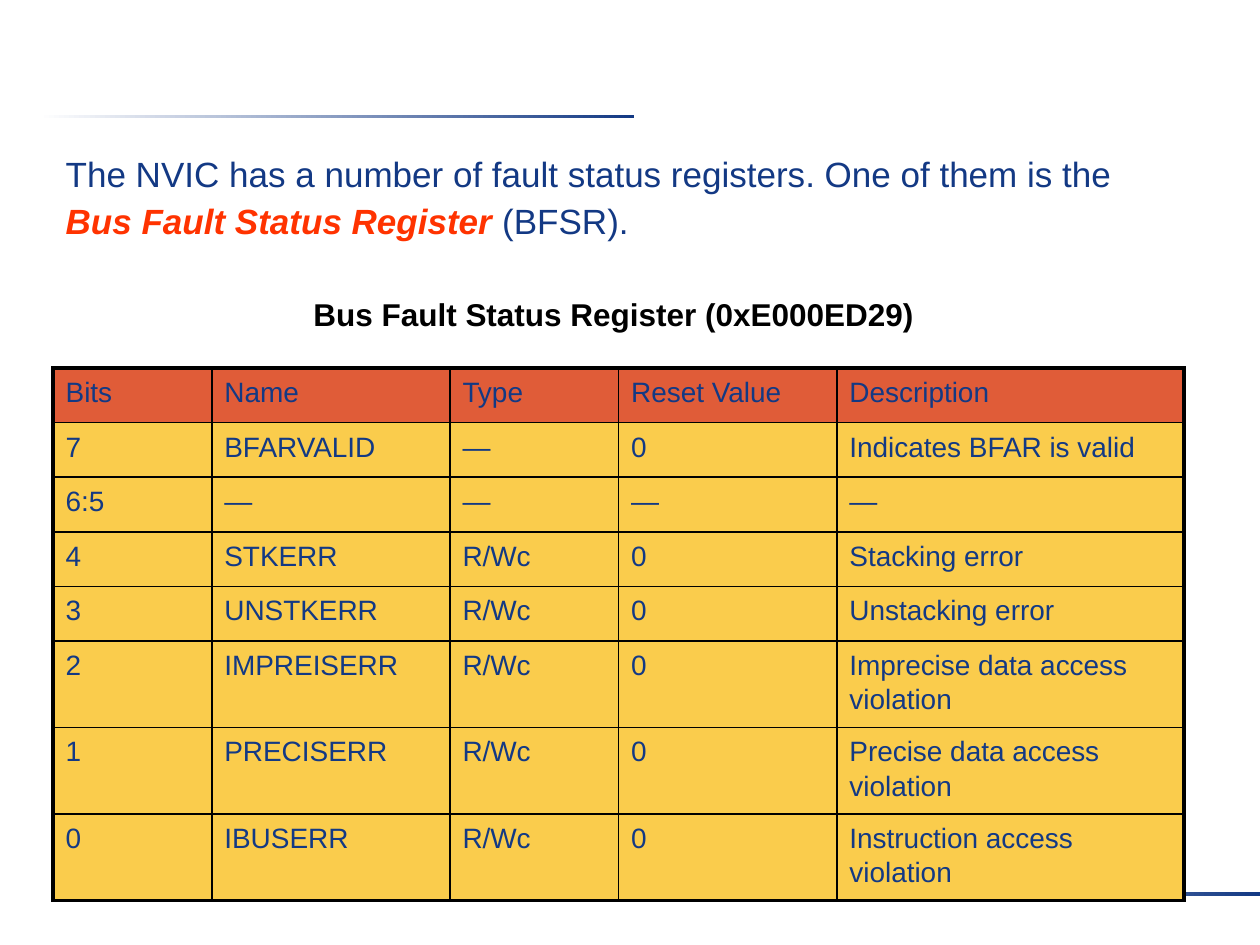
from lxml.etree import SubElement
from pptx import Presentation
from pptx.dml.color import RGBColor
from pptx.enum.shapes import MSO_SHAPE
from pptx.enum.text import MSO_ANCHOR
from pptx.oxml.ns import qn
from pptx.util import Cm, Pt

# Content
INTRO = [
    ("The NVIC has a number of fault status registers. One of them is the ", False),
    ("Bus Fault Status Register", True),
    (" (BFSR).", False),
]
CAPTION = "Bus Fault Status Register (0xE000ED29)"
REGISTER = [
    ("Bits", "Name", "Type", "Reset Value", "Description"),
    ("7", "BFARVALID", "—", "0", "Indicates BFAR is valid"),
    ("6:5", "—", "—", "—", "—"),
    ("4", "STKERR", "R/Wc", "0", "Stacking error"),
    ("3", "UNSTKERR", "R/Wc", "0", "Unstacking error"),
    ("2", "IMPREISERR", "R/Wc", "0", "Imprecise data access violation"),
    ("1", "PRECISERR", "R/Wc", "0", "Precise data access violation"),
    ("0", "IBUSERR", "R/Wc", "0", "Instruction access violation"),
]
COL_WIDTHS = (3.2, 4.8, 3.4, 4.4, 7.0)
ROW_HEIGHT, TALL_ROW_HEIGHT = 1.1, 1.74
LINE_CHARS = 25  # longest description that fits on one line
RULES = [(0.79, 2.31), (13.41, 17.98)]


class Theme:
    font = "Arial"
    navy = RGBColor(0x13, 0x39, 0x84)
    accent = RGBColor(0xFF, 0x33, 0x00)
    black = RGBColor(0, 0, 0)
    white = RGBColor(0xFF, 0xFF, 0xFF)
    header = RGBColor(0xE0, 0x5C, 0x38)
    body = RGBColor(0xFA, 0xCC, 0x4C)
    intro_size, caption_size, cell_size = Pt(20), Pt(18), Pt(16)
    inner_line, outer_line = Pt(1), Pt(2.25)
    spacing = 1.1


def style(r, size, color, bold=False, italic=False):
    font = r.font
    font.name, font.size, font.bold, font.italic = Theme.font, size, bold, italic
    font.color.rgb = color


def add_rule(s, left, top):
    sp = s.shapes.add_shape(MSO_SHAPE.RECTANGLE, Cm(left), Cm(top), Cm(11.99), Cm(0.08))
    sp.shadow.inherit = False
    sp.line.fill.background()
    sp.fill.gradient()
    sp.fill.gradient_angle = 0
    for stop, color, pos in zip(sp.fill.gradient_stops, (Theme.white, Theme.navy), (0, 1)):
        stop.color.rgb, stop.position = color, pos


def set_borders(cell, outer):
    tc_pr = cell._tc.get_or_add_tcPr()
    for side in "LRTB":
        width = Theme.outer_line if side in outer else Theme.inner_line
        ln = SubElement(tc_pr, qn(f"a:ln{side}"), w=str(int(width)))
        fill = SubElement(ln, qn("a:solidFill"))
        SubElement(fill, qn("a:srgbClr"), val=str(Theme.black))


def add_register_table(s):
    n_rows, n_cols = len(REGISTER), len(COL_WIDTHS)
    heights = [TALL_ROW_HEIGHT if len(row[-1]) > LINE_CHARS else ROW_HEIGHT for row in REGISTER]
    table = s.shapes.add_table(n_rows, n_cols, Cm(1.07), Cm(7.42),
                               Cm(sum(COL_WIDTHS)), Cm(sum(heights))).table
    table.first_row = table.horz_banding = False
    for col, width in zip(table.columns, COL_WIDTHS):
        col.width = Cm(width)
    for i, values in enumerate(REGISTER):
        table.rows[i].height = Cm(heights[i])
        for j, value in enumerate(values):
            cell = table.cell(i, j)
            cell.vertical_anchor = MSO_ANCHOR.TOP
            edges = {"L": j == 0, "R": j == n_cols - 1, "T": i == 0, "B": i == n_rows - 1}
            set_borders(cell, [side for side, on in edges.items() if on])
            cell.fill.solid()
            cell.fill.fore_color.rgb = Theme.body if i else Theme.header
            p = cell.text_frame.paragraphs[0]
            p.text = value
            p.line_spacing = Theme.spacing
            style(p.runs[0], Theme.cell_size, Theme.navy)


prs = Presentation()
prs.slide_width, prs.slide_height = Cm(25.4), Cm(19.05)
s = prs.slides.add_slide(prs.slide_layouts[1])
title = s.shapes.title.element
title.getparent().remove(title)

# Decorative rules
for left, top in RULES:
    add_rule(s, left, top)

# Introduction
sp = s.placeholders[1]
sp.left, sp.top, sp.width, sp.height = Cm(1.07), Cm(2.87), Cm(22.86), Cm(2.69)
p = sp.text_frame.paragraphs[0]
p_pr = p._p.get_or_add_pPr()
p_pr.set("marL", "0")
p_pr.set("indent", "0")
SubElement(p_pr, qn("a:buNone"))
p.line_spacing, p.space_before = Theme.spacing, Pt(0)
for text, key_term in INTRO:
    r = p.add_run()
    r.text = text
    style(r, Theme.intro_size, Theme.accent if key_term else Theme.navy, key_term, key_term)

# Table caption
tf = s.shapes.add_textbox(Cm(6.07), Cm(5.82), Cm(12.62), Cm(1.02)).text_frame
tf.word_wrap = False
tf.text = CAPTION
style(tf.paragraphs[0].runs[0], Theme.caption_size, Theme.black, bold=True)

# Register table
add_register_table(s)

prs.save("out.pptx")
